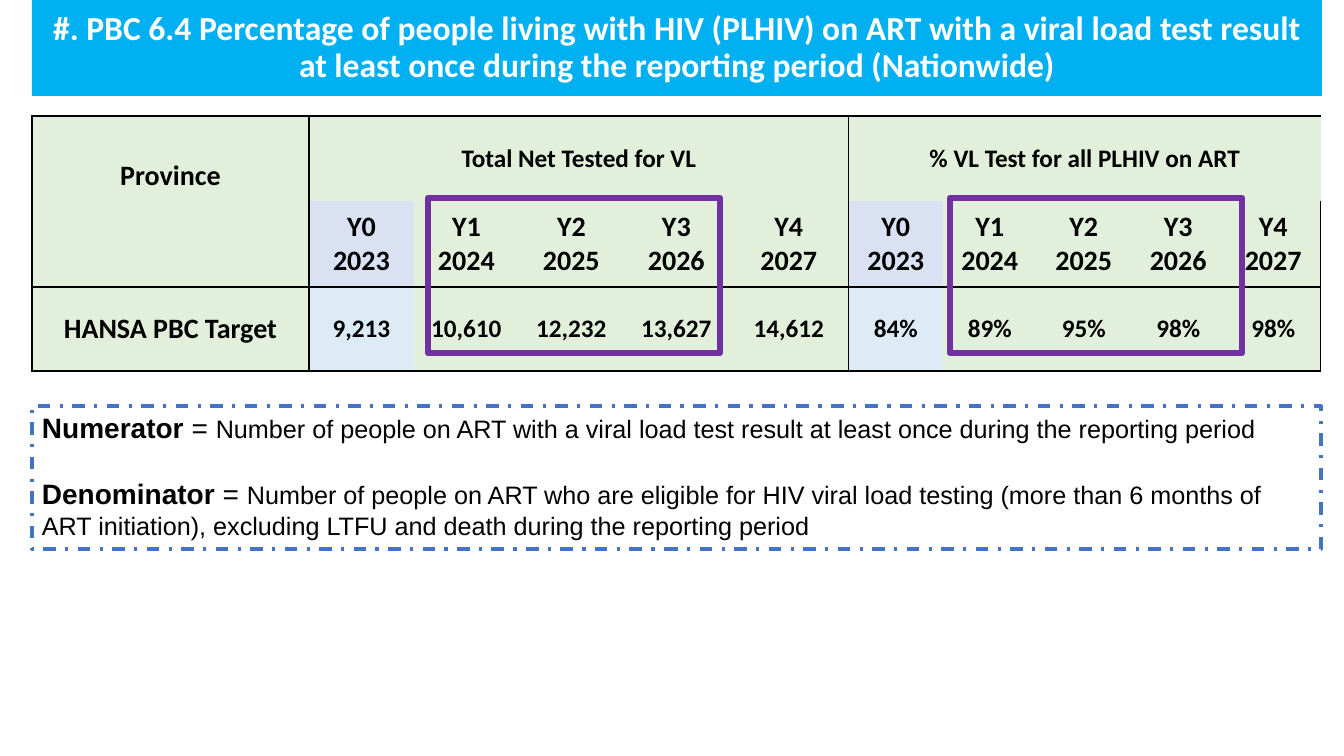
import pptx
import pptx.dml.color
import pptx.enum.dml
import pptx.enum.shapes
import pptx.enum.text
import pptx.oxml
import pptx.oxml.ns
import pptx.util

PX = 9071  # EMU in one px
CENTER = pptx.enum.text.PP_ALIGN.CENTER
MIDDLE = pptx.enum.text.MSO_ANCHOR.MIDDLE
RECTANGLE = pptx.enum.shapes.MSO_SHAPE.RECTANGLE


def colour(value):
    return pptx.dml.color.RGBColor.from_string(value)


def write(para, text, size=20, font="Calibri", bold=True, color="000000"):
    for number, line in enumerate(text.split("\n")):
        if number:
            para.add_line_break()
        span = para.add_run()
        span.text = line
        span.font.size = pptx.util.Pt(size)
        span.font.name = font
        span.font.bold = bold
        span.font.color.rgb = colour(color)


deck = pptx.Presentation()
deck.slide_width, deck.slide_height = 1344 * PX, 756 * PX
page = deck.slides.add_slide(deck.slide_layouts[6])

# Target table
widths = [277] + [105] * 4 + [120] + [94] * 3 + [95] * 2
heights = [85, 86, 84]
years = ["Y0\n2023", "Y1\n2024", "Y2\n2025", "Y3\n2026", "Y4\n2027"]
rows = [
    ["Province", "Total Net Tested for VL", "", "", "", "",
     "% VL Test for all PLHIV on ART", "", "", "", ""],
    [""] + years * 2,
    ["HANSA PBC Target", "9,213", "10,610", "12,232", "13,627", "14,612",
     "84%", "89%", "95%", "98%", "98%"],
]
table = page.shapes.add_table(3, 11, 32 * PX, 116 * PX,
                              sum(widths) * PX, sum(heights) * PX).table
table.first_row = table.horz_banding = False
for column, width in zip(table.columns, widths):
    column.width = width * PX
for row, height in zip(table.rows, heights):
    row.height = height * PX

baseline_fills = {1: "D9E1F2", 2: "DDEBF7"}
for r, texts in enumerate(rows):
    for c, text in enumerate(texts):
        cell = table.cell(r, c)
        cell.margin_left = cell.margin_right = 0
        cell.margin_top = cell.margin_bottom = 0
        cell.vertical_anchor = MIDDLE

        # Lines frame the column groups and the target row
        edges = {"L": c in (0, 1, 6), "R": c in (0, 5, 10),
                 "T": r in (0, 2), "B": r in (1, 2)}
        for side, drawn in edges.items():
            paint = ('<a:solidFill><a:srgbClr val="000000"/></a:solidFill>'
                     if drawn else "<a:noFill/>")
            cell._tc.get_or_add_tcPr().append(pptx.oxml.parse_xml(
                f'<a:ln{side} {pptx.oxml.ns.nsdecls("a")} w="12700">{paint}</a:ln{side}>'))

        cell.fill.solid()
        baseline = baseline_fills.get(r) if c in (1, 6) else None
        cell.fill.fore_color.rgb = colour(baseline or "E2EFDA")
        if text:
            para = cell.text_frame.paragraphs[0]
            para.alignment = CENTER
            write(para, text, size=20 if r == 1 or c == 0 else 18)

province = table.cell(0, 0)
province.vertical_anchor = pptx.enum.text.MSO_ANCHOR.TOP
province.margin_top = 43 * PX
province.merge(table.cell(1, 0))
for first in (1, 6):
    table.cell(0, first).merge(table.cell(0, first + 4))

# Title bar
title = page.shapes.add_shape(RECTANGLE, 32 * PX, 0, 1290 * PX, 96 * PX)
title.shadow.inherit = False
title.fill.solid()
title.fill.fore_color.rgb = colour("00B0F0")
title.line.fill.background()
title.text_frame.word_wrap = True
title.text_frame.vertical_anchor = MIDDLE
para = title.text_frame.paragraphs[0]
para.alignment = CENTER
para.line_spacing = 0.9
write(para, "#. PBC 6.4 Percentage of people living with HIV (PLHIV) on ART with a viral "
      "load test result at least once during the reporting period (Nationwide)",
      size=24, color="FFFFFF")

# Definitions
definitions = [
    ("Numerator", "Number of people on ART with a viral load test result at least once "
     "during the reporting period"),
    ("Denominator", "Number of people on ART who are eligible for HIV viral load testing "
     "(more than 6 months of ART initiation), excluding LTFU and death during the "
     "reporting period"),
]
box = page.shapes.add_textbox(32 * PX, 406 * PX, 1289 * PX, 143 * PX)
box.line.color.rgb = colour("4472C4")
box.line.width = pptx.util.Pt(2.25)
box.line.dash_style = pptx.enum.dml.MSO_LINE.DASH_DOT
frame = box.text_frame
frame.word_wrap = True
for number, (term, meaning) in enumerate(definitions):
    para = frame.add_paragraph() if number else frame.paragraphs[0]
    para.space_before = pptx.util.Pt(23 * number)
    write(para, term, font="Arial")
    write(para, " = ", font="Arial", bold=False)
    write(para, meaning, size=18, font="Arial", bold=False)

# Frames around years 1 to 3
for left in (428, 950):
    highlight = page.shapes.add_shape(RECTANGLE, left * PX, 198 * PX, 292 * PX, 155 * PX)
    highlight.shadow.inherit = False
    highlight.fill.background()
    highlight.line.color.rgb = colour("7030A0")
    highlight.line.width = pptx.util.Pt(4.5)

deck.save("out.pptx")
